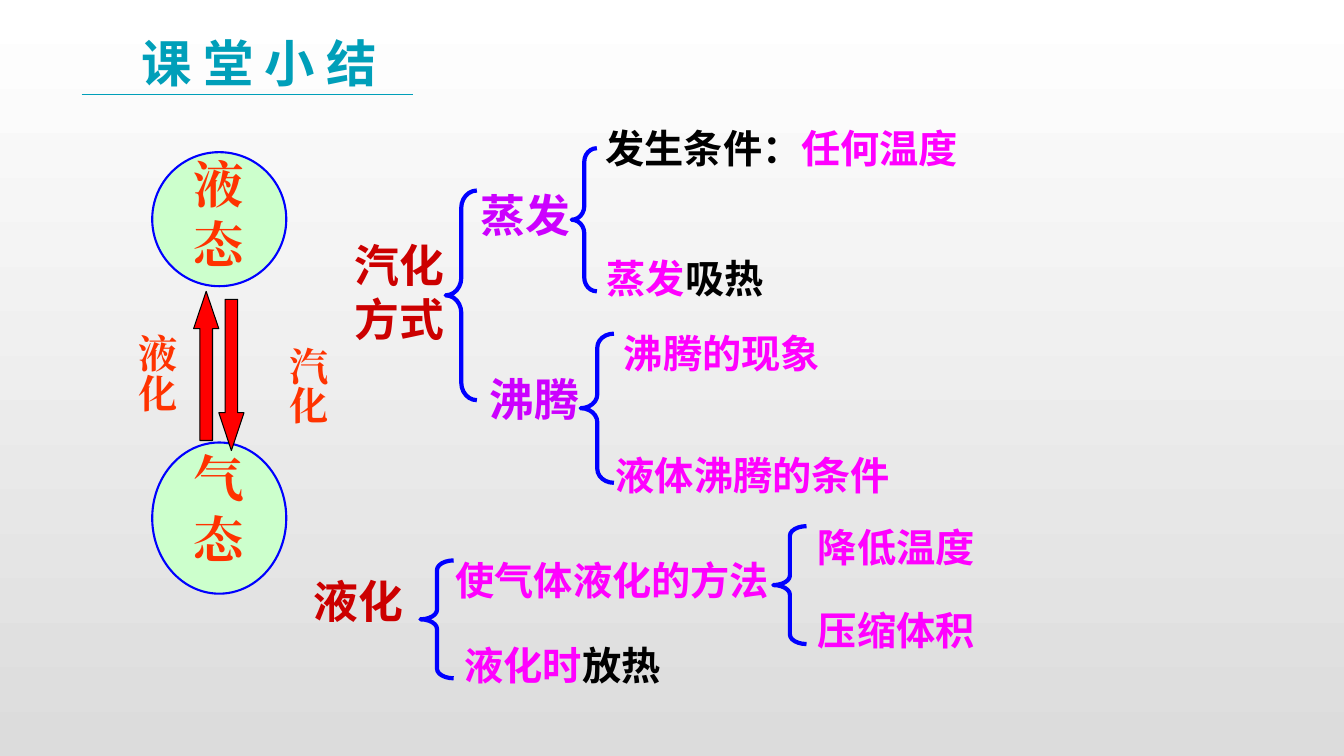
from typing import NamedTuple

from lxml.etree import SubElement
from pptx import Presentation
from pptx.dml.color import RGBColor as Rgb
from pptx.enum.shapes import MSO_CONNECTOR as Conn, MSO_SHAPE as Geo
from pptx.enum.text import MSO_ANCHOR as Anchor, MSO_AUTO_SIZE as Fit, PP_ALIGN as Align
from pptx.oxml.ns import qn
from pptx.util import Inches, Pt

HUES = {
    "white": "FFFFFF", "grey": "DCDCDC", "black": "000000", "teal": "009FB9",
    "blue": "0000FF", "mint": "CCFFCC", "red": "FF0000", "dark": "CC0000",
    "plum": "CC00FF", "pink": "FF00FF", "flame": "FF3300",
}
SANS, SERIF = "Noto Sans CJK SC", "Times New Roman"


class Label(NamedTuple):
    box: tuple[float, float, float, float]
    size: int
    runs: list[tuple[str, str]]
    font: str = SANS
    wrap: bool = True
    tall: bool = False


class Form(NamedTuple):
    box: tuple[float, float, float, float]
    geo: Geo
    line: str
    width: float
    fill: str = ""
    adj: tuple[float, ...] = ()
    flip: bool = False


def hue(name: str) -> Rgb:
    return Rgb.from_string(HUES[name])


def write(shape, label: Label) -> None:
    """Fill a text shape, run by run."""
    frame = shape.text_frame
    frame.word_wrap = label.wrap
    frame.auto_size = Fit.SHAPE_TO_FIT_TEXT
    frame.vertical_anchor = Anchor.TOP
    if label.tall:
        shape.element.find(".//" + qn("a:bodyPr")).set("vert", "eaVert")
    para = frame.paragraphs[0]
    para.alignment = Align.LEFT if label.wrap or label.tall else Align.CENTER
    if label.font == SANS:
        para.line_spacing = Pt(label.size * 1.2)
    for text, name in label.runs:
        run = para.add_run()
        run.text = text
        run.font.size = Pt(label.size)
        run.font.bold = True
        run.font.color.rgb = hue(name)
        run.font.name = label.font
        SubElement(run._r.get_or_add_rPr(), qn("a:ea")).set("typeface", label.font)


def add_form(slide, form: Form) -> None:
    shape = slide.shapes.add_shape(form.geo, *map(Inches, form.box))
    shape.shadow.inherit = False
    if form.fill:
        shape.fill.solid()
        shape.fill.fore_color.rgb = hue(form.fill)
    else:
        shape.fill.background()
    shape.line.color.rgb = hue(form.line)
    shape.line.width = Pt(form.width)
    for i, value in enumerate(form.adj):
        shape.adjustments[i] = value
    if form.flip:
        shape.element.spPr.find(qn("a:xfrm")).set("flipH", "1")


def brace(left: float, top: float, width: float, height: float, curl: float) -> Form:
    return Form((left, top, width, height), Geo.RIGHT_BRACE, "blue", 3,
                adj=(curl, 0.5), flip=True)


def state(top: float, height: float) -> Form:
    return Form((1.51, top, 1.33, height), Geo.OVAL, "blue", 1.5, "mint")


TITLE = Label((1.3, 0.27, 2.96, 0.71), 36, [("课 堂 小 结", "teal")])

FORMS = [
    # Braces of the summary tree
    brace(4.42, 1.89, 0.31, 2.08, 0.56),
    brace(5.67, 1.47, 0.25, 1.42, 0.54),
    brace(5.76, 3.31, 0.33, 1.48, 0.42),
    brace(4.17, 5.56, 0.33, 1.17, 0.29),
    brace(7.67, 5.22, 0.33, 1.17, 0.29),
    # States and the arrows between them
    state(1.51, 1.33),
    state(4.39, 1.5),
    Form((1.92, 2.89, 0.25, 1.48), Geo.UP_ARROW, "black", 0.75, "red", (0.5, 1.48)),
    Form((2.17, 2.97, 0.25, 1.5), Geo.DOWN_ARROW, "black", 0.75, "red", (0.5, 1.5)),
]

LABELS = [
    # Liquid and gas
    Label((1.82, 1.47, 1.08, 1.3), 36, [("液态", "flame")], SERIF),
    Label((1.82, 4.39, 1.08, 1.3), 36, [("气态", "flame")], SERIF),
    Label((1.17, 3.22, 0.67, 0.88), 28, [("液化", "flame")], SERIF, False, True),
    Label((2.67, 3.34, 0.67, 0.88), 28, [("汽化", "flame")], SERIF, False, True),
    # Ways to vaporise
    Label((3.42, 2.31, 1.15, 1.17), 32, [("汽化方式", "dark")]),
    Label((4.67, 1.81, 1.09, 0.63), 32, [("蒸发", "plum")], wrap=False),
    Label((4.76, 3.64, 1.75, 0.63), 32, [("沸腾", "plum")]),
    Label((5.88, 1.18, 3.75, 0.57), 28,
          [("发生条件：", "black"), ("任何温度", "pink")], wrap=False),
    Label((5.92, 2.47, 1.83, 0.57), 28, [("蒸发", "pink"), ("吸热", "black")]),
    Label((6.09, 3.22, 2.33, 0.57), 28, [("沸腾的现象", "pink")]),
    Label((6.01, 4.43, 3.67, 0.57), 28, [("液体沸腾的条件", "pink")]),
    # Liquefaction
    Label((3.01, 5.64, 1.15, 0.63), 32, [("液化", "dark")]),
    Label((4.42, 5.47, 3.33, 0.57), 28, [("使气体液化的方法", "pink")]),
    Label((4.51, 6.31, 2.75, 0.57), 28, [("液化时", "pink"), ("放热", "black")]),
    Label((8.01, 5.14, 1.76, 0.57), 28, [("降低温度", "pink")], wrap=False),
    Label((8.01, 5.97, 1.76, 0.57), 28, [("压缩体积", "pink")], wrap=False),
]


def main() -> None:
    deck = Presentation()
    deck.slide_width, deck.slide_height = Inches(13.33), Inches(7.5)
    slide = deck.slides.add_slide(deck.slide_layouts[5])

    # Background
    back = slide.background.fill
    back.gradient()
    back.gradient_angle = 270
    for stop, name in zip(back.gradient_stops, ("white", "grey")):
        stop.color.rgb = hue(name)

    # Title and its rule
    title = slide.shapes.title
    title.left, title.top, title.width, title.height = map(Inches, TITLE.box)
    write(title, TITLE)
    rule = slide.shapes.add_connector(
        Conn.STRAIGHT, *map(Inches, (0.81, 0.94, 4.1, 0.94)))
    rule.line.color.rgb = hue("teal")
    rule.line.width = Pt(0.5)
    SubElement(rule.element.spPr, qn("a:effectLst"))

    # Shapes, then text above them
    for form in FORMS:
        add_form(slide, form)
    for label in LABELS:
        write(slide.shapes.add_textbox(*map(Inches, label.box)), label)

    deck.save("out.pptx")


if __name__ == "__main__":
    main()
